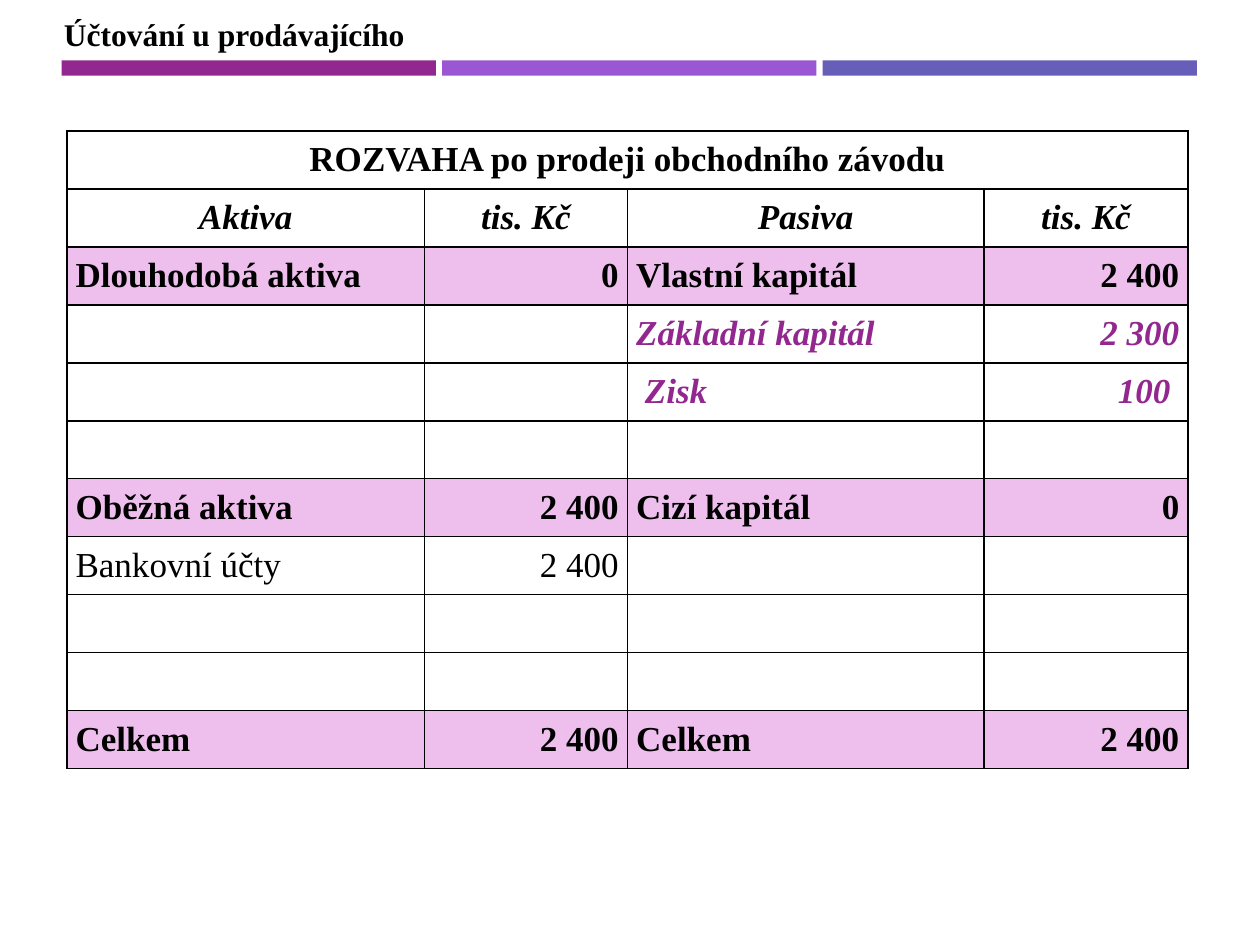
from dataclasses import dataclass

import lxml.etree
import pptx
import pptx.dml.color
import pptx.enum.shapes
import pptx.enum.text
import pptx.oxml.ns
import pptx.util

PX = 9144  # EMU per px, 100 px to the inch
FONT = "Times New Roman"
COLORS = {"black": "000000", "plum": "92278F", "violet": "9B57D3",
          "indigo": "665EB8", "pink": "EEBFED"}
ALIGN = pptx.enum.text.PP_ALIGN
BODY_ALIGN = (ALIGN.LEFT, ALIGN.RIGHT, ALIGN.JUSTIFY, ALIGN.RIGHT)
COLUMNS = (284, 161, 283, 162)
ROW_HEIGHT = 46
BAR_LEFT, BAR_WIDTH, BAR_STEP = 49, 297, 302


@dataclass(frozen=True)
class Style:
    bold: bool = False
    italic: bool = False
    color: str = "black"
    fill: str | None = None
    centered: bool = False


@dataclass(frozen=True)
class Row:
    texts: tuple[str, ...] = ("", "", "", "")
    style: Style = Style()


TITLE = Style(bold=True, centered=True)
HEADER = Style(bold=True, italic=True, centered=True)
TOTAL = Style(bold=True, fill="pink")
DETAIL = Style(bold=True, italic=True, color="plum")

ROWS = (
    Row(("ROZVAHA po prodeji obchodního závodu", "", "", ""), TITLE),
    Row(("Aktiva", "tis. Kč", "Pasiva", "tis. Kč"), HEADER),
    Row(("Dlouhodobá aktiva", "0", "Vlastní kapitál", "2 400"), TOTAL),
    Row(("", "", "Základní kapitál", "2 300"), DETAIL),
    Row(("", "", " Zisk", "100 "), DETAIL),
    Row(),
    Row(("Oběžná aktiva", "2 400", "Cizí kapitál", "0"), TOTAL),
    Row(("Bankovní účty", "2 400", "", "")),
    Row(),
    Row(),
    Row(("Celkem", "2 400", "Celkem", "2 400"), TOTAL),
)


def px(n: int) -> pptx.util.Emu:
    return pptx.util.Emu(n * PX)


def rgb(name: str) -> pptx.dml.color.RGBColor:
    return pptx.dml.color.RGBColor.from_string(COLORS[name])


def set_font(p, size: int, style: Style) -> None:
    font = p.font
    font.name, font.size = FONT, pptx.util.Pt(size)
    font.bold, font.italic = style.bold, style.italic
    font.color.rgb = rgb(style.color)


def add_bar(s, left: int, color: str) -> None:
    sp = s.shapes.add_shape(pptx.enum.shapes.MSO_SHAPE.RECTANGLE,
                            px(left), px(48), px(BAR_WIDTH), px(12))
    sp.shadow.inherit = False
    sp.fill.solid()
    sp.fill.fore_color.rgb = rgb(color)
    sp.line.fill.background()


def add_heading(s, text: str) -> None:
    tf = s.shapes.add_textbox(px(41), px(7), px(293), px(40)).text_frame
    tf.word_wrap = False
    p = tf.paragraphs[0]
    p.text = text
    set_font(p, 18, Style(bold=True))


def add_borders(cell) -> None:
    """Draw a 1 pt black line on all four sides of a cell."""
    qn = pptx.oxml.ns.qn
    tc_pr = cell._tc.get_or_add_tcPr()
    for side in ("lnL", "lnR", "lnT", "lnB"):
        ln = lxml.etree.SubElement(tc_pr, qn(f"a:{side}"), w="12700")
        fill = lxml.etree.SubElement(ln, qn("a:solidFill"))
        lxml.etree.SubElement(fill, qn("a:srgbClr"), val=COLORS["black"])


def fill_cell(cell, text: str, style: Style, align) -> None:
    add_borders(cell)
    if style.fill:
        cell.fill.solid()
        cell.fill.fore_color.rgb = rgb(style.fill)
    else:
        cell.fill.background()
    cell.margin_left = cell.margin_right = px(7)
    cell.margin_top = cell.margin_bottom = 0
    cell.vertical_anchor = pptx.enum.text.MSO_ANCHOR.MIDDLE
    p = cell.text_frame.paragraphs[0]
    p.text = text
    p.alignment = ALIGN.CENTER if style.centered else align
    set_font(p, 20, style)


def add_balance_sheet(s) -> None:
    table = s.shapes.add_table(len(ROWS), len(COLUMNS), px(53), px(104),
                               px(sum(COLUMNS)),
                               px(ROW_HEIGHT * len(ROWS))).table
    table.first_row = table.horz_banding = False
    for column, width in zip(table.columns, COLUMNS):
        column.width = px(width)
    for i, row in enumerate(ROWS):
        table.rows[i].height = px(ROW_HEIGHT)
        for j, (text, align) in enumerate(zip(row.texts, BODY_ALIGN)):
            fill_cell(table.cell(i, j), text, row.style, align)
    table.cell(0, 0).merge(table.cell(0, len(COLUMNS) - 1))


def main() -> None:
    prs = pptx.Presentation()
    prs.slide_width, prs.slide_height = px(1000), px(750)
    s = prs.slides.add_slide(prs.slide_layouts[6])
    for i, color in enumerate(("plum", "violet", "indigo")):
        add_bar(s, BAR_LEFT + i * BAR_STEP, color)
    add_heading(s, "Účtování u prodávajícího")
    add_balance_sheet(s)
    prs.save("out.pptx")


if __name__ == "__main__":
    main()
